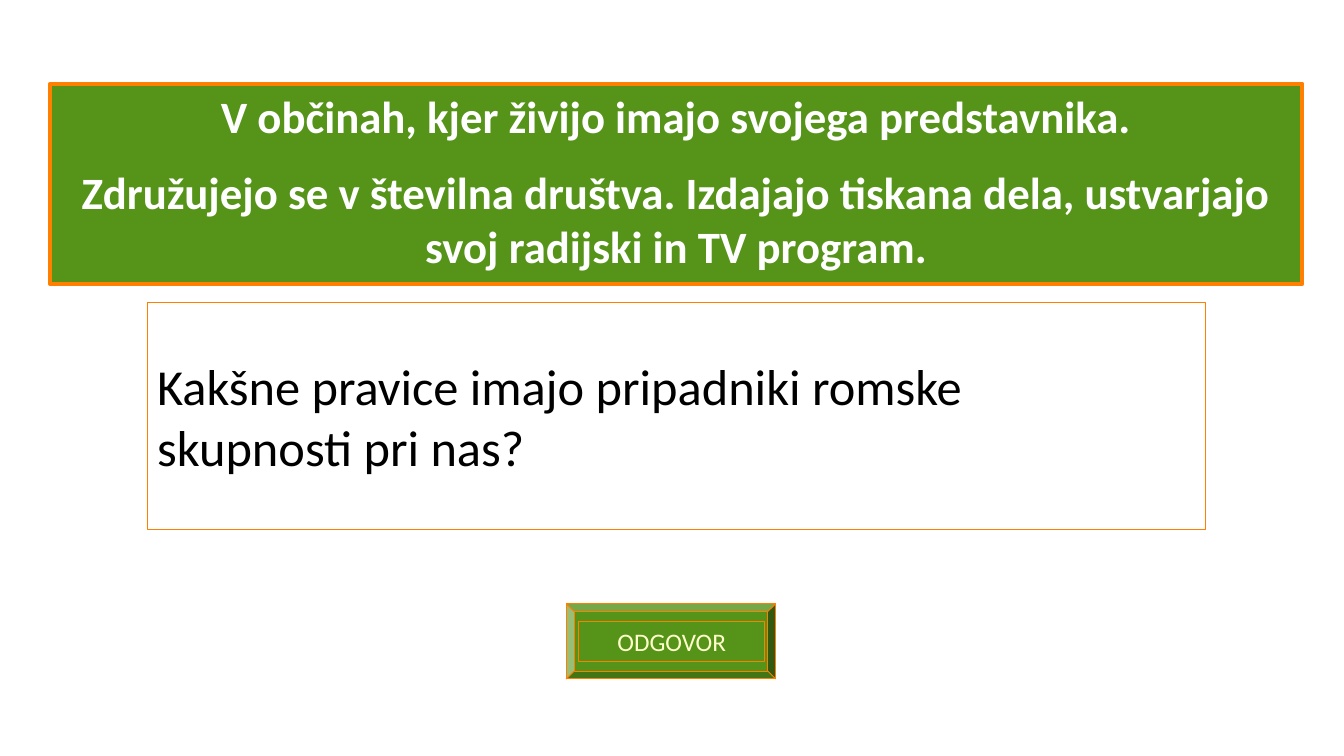
from pptx import Presentation
from pptx.dml.color import RGBColor
from pptx.enum.shapes import MSO_SHAPE
from pptx.enum.text import MSO_ANCHOR, PP_ALIGN
from pptx.util import Cm, Pt

GREEN = RGBColor(0x56, 0x93, 0x19)
ORANGE = RGBColor(0xFF, 0x7F, 0x00)
CREAM = RGBColor(0xFF, 0xFF, 0xCC)
WHITE = RGBColor(0xFF, 0xFF, 0xFF)
BLACK = RGBColor(0x00, 0x00, 0x00)


class QuizSlide:
    """Holds the quiz style and the slide being filled."""

    font_name = "Calibri"
    border = ORANGE

    def __init__(self, slide):
        self.slide = slide

    def panel(self, left, top, width, height, fill=GREEN, border_width=0.75,
              preset=MSO_SHAPE.RECTANGLE, parent=None):
        """Add a bordered shape, measured in cm, to the slide or a group."""
        shapes = (parent or self.slide).shapes
        panel = shapes.add_shape(preset, Cm(left), Cm(top), Cm(width), Cm(height))
        panel.shadow.inherit = False
        panel.fill.solid()
        panel.fill.fore_color.rgb = fill
        panel.line.color.rgb = self.border
        panel.line.width = Pt(border_width)
        return panel

    def text(self, panel, lines, size, color, bold=False, align=PP_ALIGN.CENTER,
             anchor=MSO_ANCHOR.TOP, gap=0):
        frame = panel.text_frame
        frame.word_wrap = True
        frame.vertical_anchor = anchor
        for index, line in enumerate(lines):
            paragraph = frame.add_paragraph() if index else frame.paragraphs[0]
            paragraph.alignment = align
            paragraph.space_before = Pt(gap if index else 0)
            run = paragraph.add_run()
            run.text = line
            run.font.name = self.font_name
            run.font.size = Pt(size)
            run.font.bold = bold
            run.font.color.rgb = color

    def button(self, label):
        group = self.slide.shapes.add_group_shape()
        bevel = self.panel(14.27, 15.21, 5.28, 1.9, preset=MSO_SHAPE.BEVEL, parent=group)
        bevel.adjustments[0] = 0.104
        face = self.panel(14.58, 15.65, 4.7, 1.02, parent=group)
        self.text(face, [label], 18, CREAM)


def main():
    presentation = Presentation()
    presentation.slide_width = Cm(33.87)
    presentation.slide_height = Cm(19.05)
    quiz = QuizSlide(presentation.slides.add_slide(presentation.slide_layouts[6]))

    quiz.button("ODGOVOR")

    answer = quiz.panel(1.27, 2.11, 31.55, 5.05, border_width=3)
    quiz.text(answer, [
        "V občinah, kjer živijo imajo svojega predstavnika.",
        "Združujejo se v številna društva. Izdajajo tiskana dela, "
        "ustvarjajo svoj radijski in TV program.",
    ], 32, WHITE, bold=True, gap=16)

    question = quiz.panel(3.71, 7.62, 26.67, 5.72, fill=WHITE)
    quiz.text(question, [
        "Kakšne pravice imajo pripadniki romske",
        "skupnosti pri nas?",
    ], 36, BLACK, align=PP_ALIGN.LEFT, anchor=MSO_ANCHOR.MIDDLE)

    presentation.save("out.pptx")


if __name__ == "__main__":
    main()
